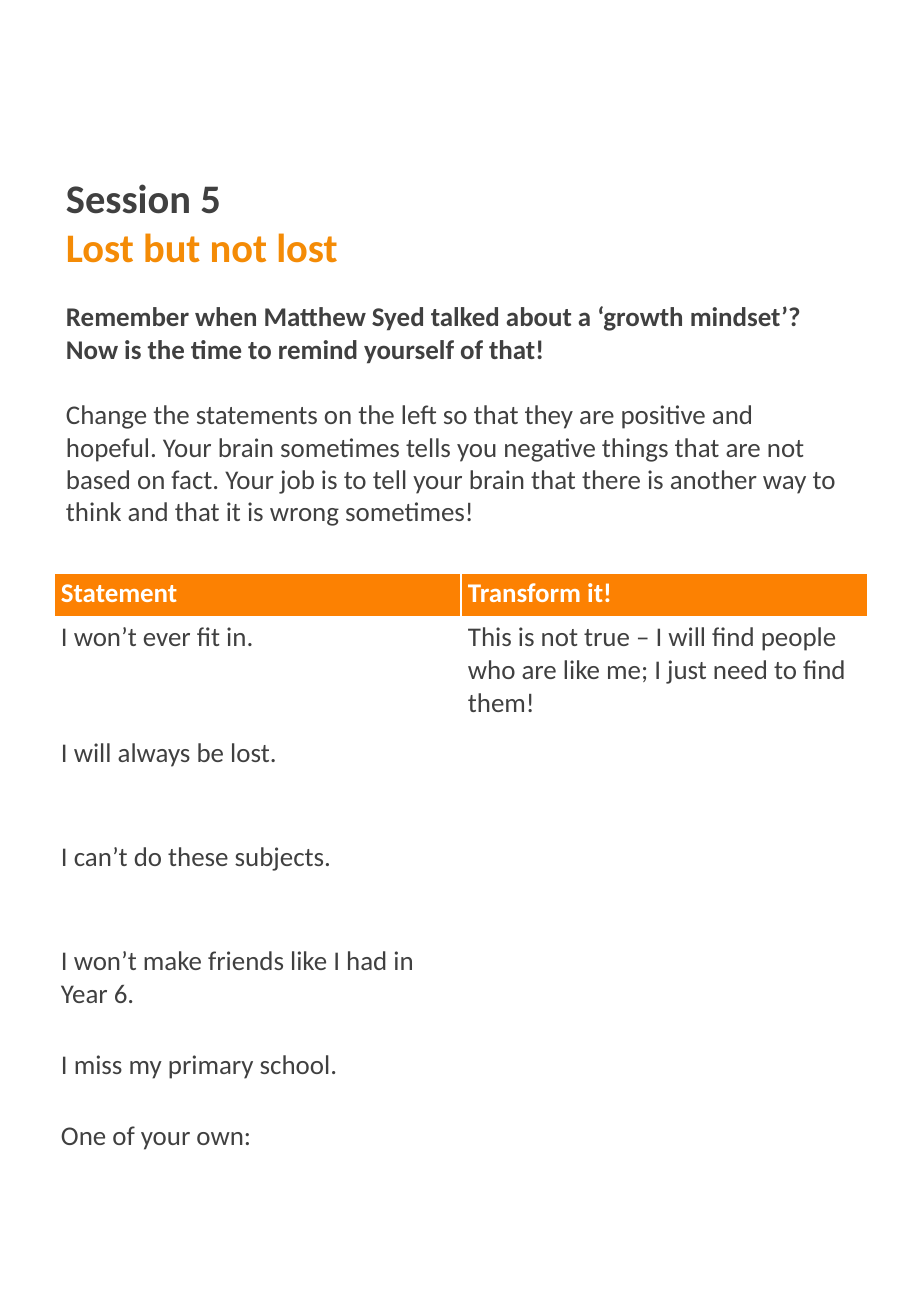
from pptx import Presentation
from pptx.dml.color import RGBColor
from pptx.enum.text import MSO_ANCHOR, MSO_AUTO_SIZE, PP_ALIGN
from pptx.util import Pt

PX = 7526
FONT = "Calibri"
COLORS = {"text": "404040", "title": "F48B06", "header": "FC8102", "white": "FFFFFF"}

INTRO = ("Remember when Matthew Syed talked about a ‘growth mindset’? "
         "Now is the time to remind yourself of that!")
TASK = ("Change the statements on the left so that they are positive and hopeful. "
        "Your brain sometimes tells you negative things that are not based on fact. "
        "Your job is to tell your brain that there is another way to think and that "
        "it is wrong sometimes!")
ROWS = [
    (44, "Statement", "Transform it!"),
    (116, "I won’t ever fit in.",
     "This is not true – I will find people who are like me; I just need to find them!"),
    (104, "I will always be lost.", ""),
    (104, "I can’t do these subjects.", ""),
    (104, "I won’t make friends like I had in Year 6.", ""),
    (71, "I miss my primary school.", ""),
    (105, "One of your own:", ""),
]


def px(*lengths):
    """Turn px lengths into a list of EMU."""
    return [n * PX for n in lengths]


def rgb(name):
    """Look up a named colour."""
    return RGBColor.from_string(COLORS[name])


def write(p, text, size=16, color="text", bold=False, before=0):
    """Fill a paragraph with formatted text."""
    p.alignment = PP_ALIGN.LEFT
    p.font.name, p.font.size, p.font.bold = FONT, Pt(size), bold
    p.font.color.rgb = rgb(color)
    if before:
        p.space_before = Pt(before)
    if text:
        r = p.add_run()
        r.text = text
        r.font.name, r.font.size, r.font.bold = FONT, Pt(size), bold
        r.font.color.rgb = rgb(color)


def fill_text(sp, paragraphs):
    """Write (text, format) pairs into a shape, wrapped from the top."""
    tf = sp.text_frame
    tf.word_wrap = True
    tf.auto_size = MSO_AUTO_SIZE.SHAPE_TO_FIT_TEXT
    tf.vertical_anchor = MSO_ANCHOR.TOP
    for i, (text, style) in enumerate(paragraphs):
        p = tf.add_paragraph() if i else tf.paragraphs[0]
        write(p, text, **style)


def add_outline(s, left, top, width, height):
    """Add an unfilled rectangular outline that can hold text."""
    right, bottom = left + width, top + height
    builder = s.shapes.build_freeform(left, top, scale=PX)
    builder.add_line_segments([(right, top), (right, bottom), (left, bottom)])
    sp = builder.convert_to_shape()
    sp.shadow.inherit = False
    sp.fill.background()
    sp.line.fill.background()
    return sp


def fill_cell(cell, text, header):
    """Style one table cell and write its text."""
    cell.margin_left, cell.margin_right, cell.margin_top, cell.margin_bottom = px(7, 7, 4, 4)
    if header:
        cell.fill.solid()
        cell.fill.fore_color.rgb = rgb("header")
    else:
        cell.fill.background()
    write(cell.text_frame.paragraphs[0], text,
          color="white" if header else "text", bold=header)


def add_statements(s, left, top, col_width):
    """Add the table of statements to transform."""
    height = sum(row[0] for row in ROWS)
    frame = s.shapes.add_table(len(ROWS), 2, *px(left, top, 2 * col_width, height))
    table = frame.table
    table.horz_banding = False
    for column in table.columns:
        column.width = col_width * PX
    for i, (row_height, *texts) in enumerate(ROWS):
        table.rows[i].height = row_height * PX
        for j, text in enumerate(texts):
            fill_cell(table.cell(i, j), text, header=i == 0)


def main():
    """Build and save the worksheet."""
    prs = Presentation()
    prs.slide_width, prs.slide_height = px(911, 1316)
    s = prs.slides.add_slide(prs.slide_layouts[6])
    body = s.shapes.add_textbox(*px(54, 294, 803, 242))
    fill_text(body, [(INTRO, {"bold": True}), (TASK, {"before": 19.5})])
    add_statements(s, 54, 573, 407)
    fill_text(add_outline(s, 54, 167, 464, 111), [
        ("Session 5", {"size": 24, "bold": True}),
        ("Lost but not lost", {"size": 24, "bold": True, "color": "title"}),
    ])
    prs.save("out.pptx")


if __name__ == "__main__":
    main()
